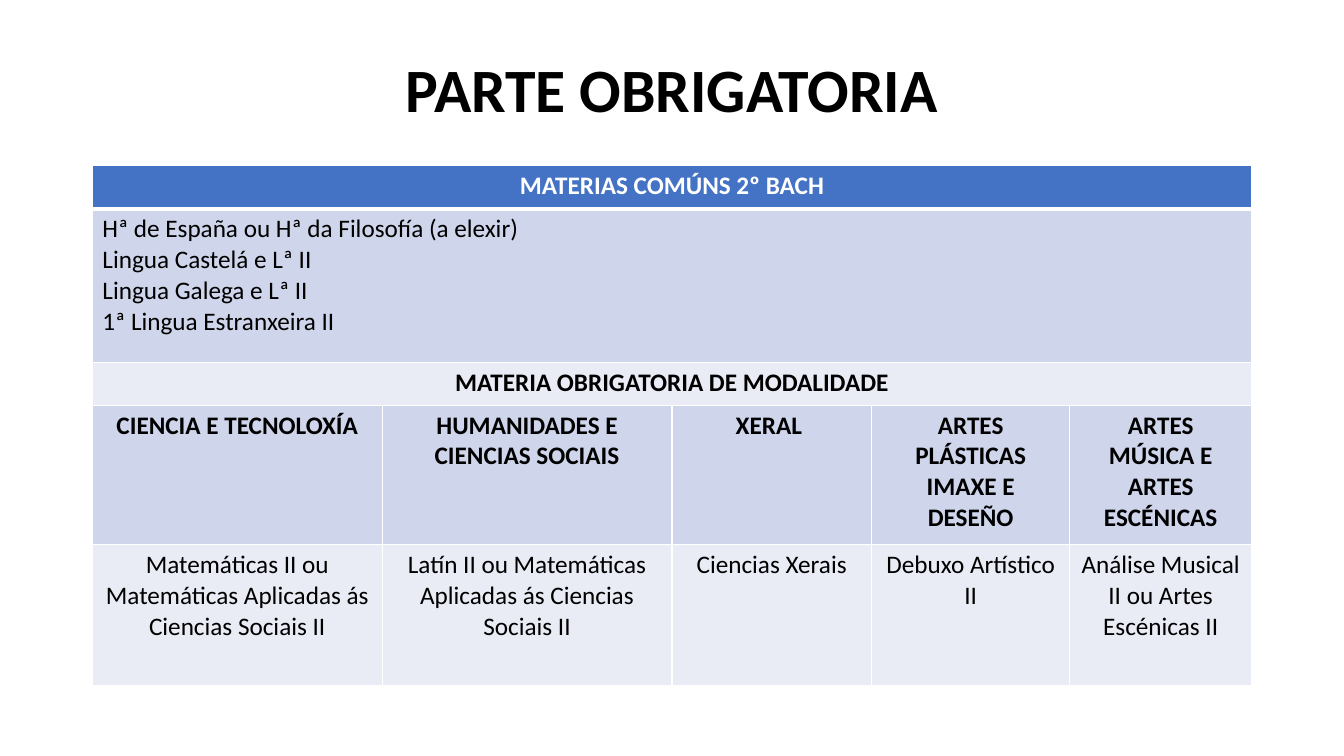
from lxml.etree import SubElement as Sub
from pptx import Presentation
from pptx.dml.color import RGBColor as Rgb
from pptx.enum.text import MSO_ANCHOR as Anchor, PP_ALIGN as Align
from pptx.oxml.ns import qn
from pptx.util import Pt

UNIT = 9525
THEME = {
    "font": "Calibri",
    "title": 44,
    "body": 18,
    "ink": "000000",
    "paper": "FFFFFF",
    "head": "4472C4",
    "dark": "CFD5EA",
    "light": "E9EBF5",
    "thin": 1,
    "thick": 3,
}

COLS = [276, 276, 190, 189, 173]
ROWS = [
    {"high": 41, "fill": "head", "ink": "paper", "bold": True,
     "cells": ["MATERIAS COMÚNS 2º BACH"]},
    {"high": 146, "fill": "dark", "ink": "ink", "bold": False, "align": Align.LEFT,
     "cells": ["Hª de España ou Hª da Filosofía (a elexir)\n"
               "Lingua Castelá e Lª II\n"
               "Lingua Galega e Lª II\n"
               "1ª Lingua Estranxeira II"]},
    {"high": 41, "fill": "light", "ink": "ink", "bold": True,
     "cells": ["MATERIA OBRIGATORIA DE MODALIDADE"]},
    {"high": 133, "fill": "dark", "ink": "ink", "bold": True,
     "cells": ["CIENCIA E TECNOLOXÍA",
               "HUMANIDADES E CIENCIAS SOCIAIS",
               "XERAL ",
               "ARTES\nPLÁSTICAS IMAXE E DESEÑO",
               "ARTES\nMÚSICA E ARTES ESCÉNICAS"]},
    {"high": 134, "fill": "light", "ink": "ink", "bold": False,
     "cells": ["Matemáticas II ou Matemáticas Aplicadas ás Ciencias Sociais II",
               "Latín II ou Matemáticas Aplicadas ás Ciencias Sociais II",
               "Ciencias Xerais",
               "Debuxo Artístico II",
               "Análise Musical II ou Artes Escénicas II"]},
]


def px(num):
    return num * UNIT


def tint(name):
    return Rgb.from_string(THEME[name])


def apply(part, form):
    for key, val in form.items():
        setattr(part, key, val)


def write(frame, text, size, ink, bold, form):
    frame.text = text
    for para in frame.paragraphs:
        apply(para, form)
        for run in para.runs:
            apply(run.font, {"name": THEME["font"], "size": Pt(THEME[size]), "bold": bold})
            run.font.color.rgb = tint(ink)


def edge(cell, top, base):
    props = cell._tc.get_or_add_tcPr()
    sides = {"L": "thin", "R": "thin", "T": top, "B": base}
    for side, width in sides.items():
        line = Sub(props, qn(f"a:ln{side}"), w=str(Pt(THEME[width])))
        fill = Sub(line, qn("a:solidFill"))
        Sub(fill, qn("a:srgbClr"), val=THEME["paper"])


def paint(cell, row, top, base):
    edge(cell, top, base)
    cell.fill.solid()
    cell.fill.fore_color.rgb = tint(row["fill"])


def head(slide, box, text):
    title = slide.shapes.title
    apply(title, dict(zip(("left", "top", "width", "height"), map(px, box))))
    apply(title.text_frame, {"word_wrap": True, "vertical_anchor": Anchor.MIDDLE})
    write(title.text_frame, text, "title", "ink", True,
          {"alignment": Align.CENTER, "line_spacing": 0.9})


def grid(slide, box):
    table = slide.shapes.add_table(len(ROWS), len(COLS), *map(px, box)).table
    apply(table, {"first_row": False, "horz_banding": False})
    for col, wide in zip(table.columns, COLS):
        col.width = px(wide)
    for at, row in enumerate(ROWS):
        table.rows[at].height = px(row["high"])
        top = "thick" if at == 1 else "thin"
        base = "thick" if at == 0 else "thin"
        for cell in table.rows[at].cells:
            paint(cell, row, top, base)
        if len(row["cells"]) == 1:
            table.cell(at, 0).merge(table.cell(at, len(COLS) - 1))
        for col, text in enumerate(row["cells"]):
            write(table.cell(at, col).text_frame, text, "body", row["ink"], row["bold"],
                  {"alignment": row.get("align", Align.CENTER)})


def main():
    deck = Presentation()
    apply(deck, {"slide_width": px(1280), "slide_height": px(720)})
    slide = deck.slides.add_slide(deck.slide_layouts[5])
    head(slide, (88, 38, 1104, 100), "PARTE OBRIGATORIA")
    grid(slide, (88, 158, sum(COLS), sum(row["high"] for row in ROWS)))
    deck.save("out.pptx")


if __name__ == "__main__":
    main()
